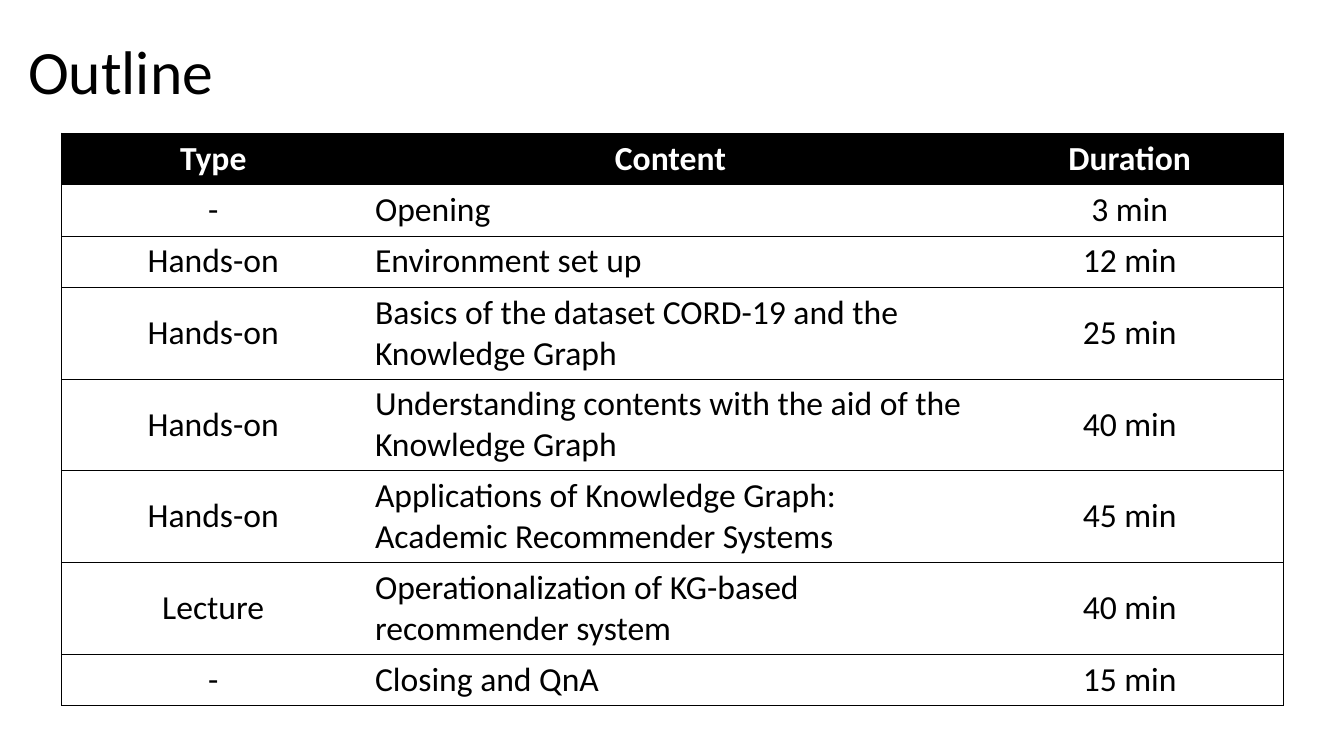
from lxml import etree
from pptx import Presentation
from pptx.dml.color import RGBColor
from pptx.enum.text import MSO_ANCHOR, PP_ALIGN
from pptx.oxml.ns import qn
from pptx.util import Inches, Pt

BLACK = RGBColor(0x00, 0x00, 0x00)
WHITE = RGBColor(0xFF, 0xFF, 0xFF)
LEFT, CENTER = PP_ALIGN.LEFT, PP_ALIGN.CENTER
TOP, MIDDLE = MSO_ANCHOR.TOP, MSO_ANCHOR.MIDDLE

WIDTH, HEIGHT = 13.33, 7.5
LINE_HEIGHT, ROW_PADDING = 0.4, 0.11
COLUMN_WIDTHS = (3.01, 6.06, 3.05)
HEADINGS = ("Type", "Content", "Duration")
SESSIONS = (
    ("-", "Opening", "3 min", 1),
    ("Hands-on", "Environment set up", "12 min", 1),
    ("Hands-on", "Basics of the dataset CORD-19 and the Knowledge Graph", "25 min", 2),
    ("Hands-on", "Understanding contents with the aid of the Knowledge Graph", "40 min", 2),
    ("Hands-on", "Applications of Knowledge Graph: Academic Recommender Systems", "45 min", 2),
    ("Lecture", "Operationalization of KG-based recommender system", "40 min", 2),
    ("-", "Closing and QnA", "15 min", 1),
)


class OutlineSlide:
    """Holds the text style and the current slide, and adds titles and tables."""

    def __init__(self, presentation):
        self.slide = presentation.slides.add_slide(presentation.slide_layouts[6])
        self.font_name = "Calibri"
        self.border_width = Pt(0.5)

    def add_text(self, frame, text, size, color, bold=False, alignment=LEFT):
        paragraph = frame.paragraphs[0]
        paragraph.alignment = alignment
        run = paragraph.add_run()
        run.text = text
        style = {"name": self.font_name, "size": Pt(size), "bold": bold}
        for name, value in style.items():
            setattr(run.font, name, value)
        run.font.color.rgb = color
        return paragraph

    def title(self, text, left, top, width, height):
        box = self.slide.shapes.add_textbox(
            Inches(left * WIDTH), Inches(top * HEIGHT),
            Inches(width * WIDTH), Inches(height * HEIGHT))
        frame = box.text_frame
        frame.word_wrap = True
        frame.vertical_anchor = MIDDLE
        self.add_text(frame, text, 44, BLACK).line_spacing = 0.9

    def border(self, cell, visible_sides):
        properties = cell._tc.get_or_add_tcPr()
        for side in "LRTB":
            line = etree.SubElement(properties, qn(f"a:ln{side}"), w=str(self.border_width))
            if side in visible_sides:
                fill = etree.SubElement(line, qn("a:solidFill"))
                etree.SubElement(fill, qn("a:srgbClr"), val=str(BLACK))
            else:
                etree.SubElement(line, qn("a:noFill"))

    def cell(self, cell, text, column, is_header):
        sides = "TB" + {0: "L", len(HEADINGS) - 1: "R"}.get(column, "")
        self.border(cell, sides)
        cell.fill.solid()
        cell.fill.fore_color.rgb = BLACK if is_header else WHITE
        cell.vertical_anchor = TOP if is_header else MIDDLE
        alignment = LEFT if column == 1 and not is_header else CENTER
        self.add_text(cell.text_frame, text, 24, WHITE if is_header else BLACK,
                      is_header, alignment)

    def schedule(self, left, top):
        rows = [(*HEADINGS, 1), *SESSIONS]
        heights = [ROW_PADDING + LINE_HEIGHT * lines for *_, lines in rows]
        table = self.slide.shapes.add_table(
            len(rows), len(HEADINGS), Inches(left * WIDTH), Inches(top * HEIGHT),
            Inches(sum(COLUMN_WIDTHS)), Inches(sum(heights))).table
        table.horz_banding = False
        for column, width in zip(table.columns, COLUMN_WIDTHS):
            column.width = Inches(width)
        for index, (*texts, _) in enumerate(rows):
            table.rows[index].height = Inches(heights[index])
            for column, text in enumerate(texts):
                self.cell(table.cell(index, column), text, column, index == 0)


def main():
    presentation = Presentation()
    presentation.slide_width = Inches(WIDTH)
    presentation.slide_height = Inches(HEIGHT)
    outline = OutlineSlide(presentation)
    outline.title("Outline", 0.18 / WIDTH, 0.02, 12.99 / WIDTH, 1.17 / HEIGHT)
    outline.schedule(0.61 / WIDTH, 1.32 / HEIGHT)
    presentation.save("out.pptx")


if __name__ == "__main__":
    main()
